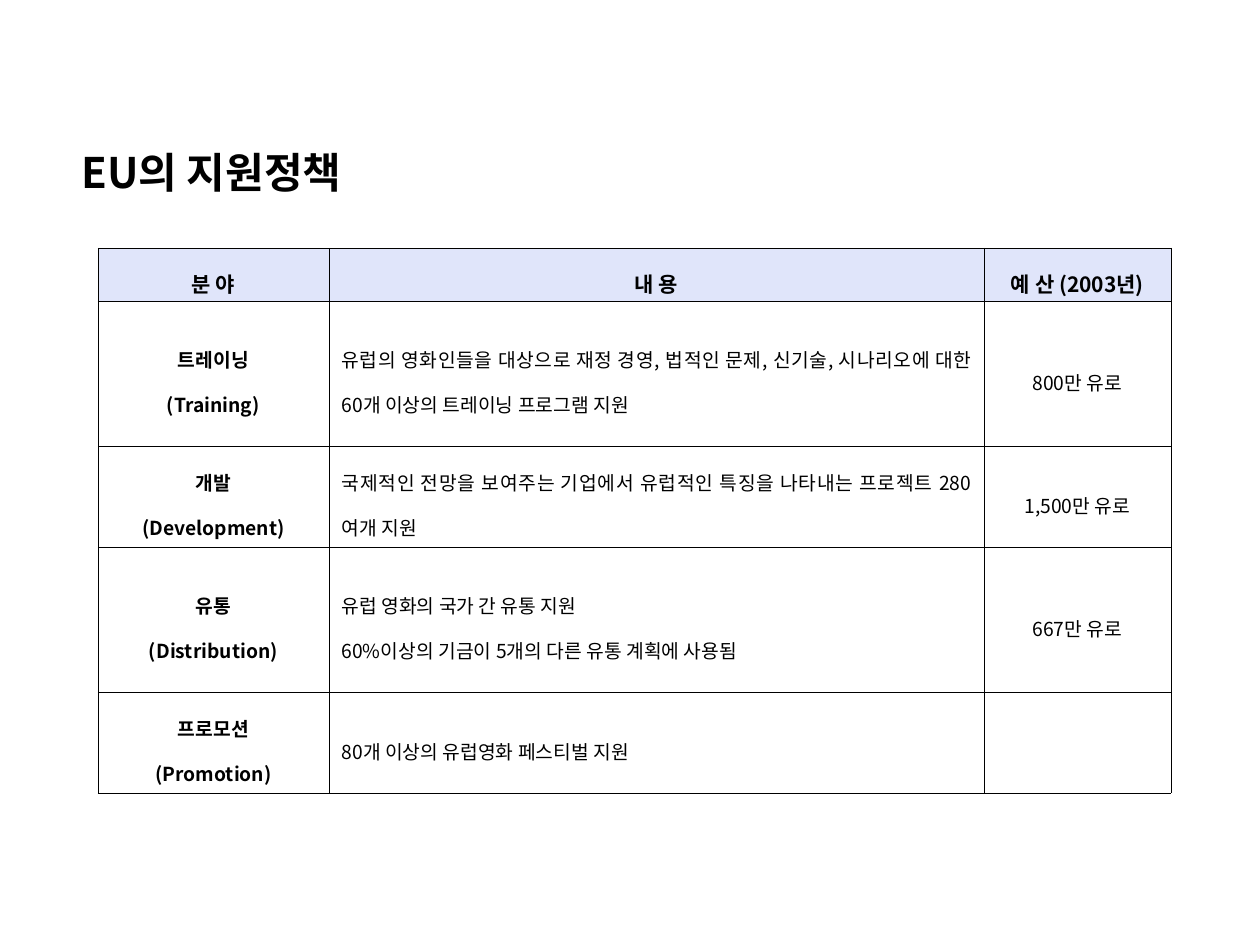
from lxml.etree import SubElement
from pptx import Presentation
from pptx.dml.color import RGBColor
from pptx.enum.text import MSO_ANCHOR, MSO_AUTO_SIZE, PP_ALIGN as ALIGN
from pptx.oxml.ns import qn
from pptx.util import Pt

PX = 914400 // 126
FONT = "Noto Sans CJK KR"
COLORS = {"text": "000000", "border": "000000", "header": "E0E5FA"}

TITLE = "EU의 지원정책"
COLS = [231, 655, 187]
ROWS = [53, 145, 101, 145, 101]
POLICIES = [
    ("분 야", "내 용", "예 산 (2003년)"),
    ("트레이닝\n(Training)",
     "유럽의 영화인들을 대상으로 재정 경영, 법적인 문제, 신기술, "
     "시나리오에 대한 60개 이상의 트레이닝 프로그램 지원",
     "800만 유로"),
    ("개발\n(Development)",
     "국제적인 전망을 보여주는 기업에서 유럽적인 특징을 나타내는 "
     "프로젝트 280여개 지원",
     "1,500만 유로"),
    ("유통\n(Distribution)",
     "유럽 영화의 국가 간 유통 지원\n"
     "60%이상의 기금이 5개의 다른 유통 계획에 사용됨",
     "667만 유로"),
    ("프로모션\n(Promotion)", "80개 이상의 유럽영화 페스티벌 지원", ""),
]


def px(n):
    return n * PX


def format_text(tf, size, bold, align=ALIGN.LEFT, spacing=None):
    for p in tf.paragraphs:
        p.alignment = align
        p.line_spacing = spacing
        for r in p.runs:
            r.font.size = Pt(size)
            r.font.bold = bold
            r.font.name = FONT
            r.font.color.rgb = RGBColor.from_string(COLORS["text"])
            SubElement(r.font._element, qn("a:ea"), typeface=FONT)


def set_borders(cell):
    tcPr = cell._tc.get_or_add_tcPr()
    for i, side in enumerate(("lnL", "lnR", "lnT", "lnB")):
        ln = tcPr.makeelement(qn(f"a:{side}"), {"w": str(Pt(0.28))})
        fill = SubElement(ln, qn("a:solidFill"))
        SubElement(fill, qn("a:srgbClr"), val=COLORS["border"])
        tcPr.insert(i, ln)  # borders precede the fill


def add_title(slide, x, y, w, h):
    tf = slide.shapes.add_textbox(px(x), px(y), px(w), px(h)).text_frame
    tf.word_wrap = False
    tf.auto_size = MSO_AUTO_SIZE.SHAPE_TO_FIT_TEXT
    tf.margin_top = tf.margin_bottom = 0
    tf.text = TITLE
    format_text(tf, 24, True)


def add_policy_table(slide, x, y):
    table = slide.shapes.add_table(
        len(ROWS), len(COLS), px(x), px(y), px(sum(COLS)), px(sum(ROWS))
    ).table
    table.first_row = table.horz_banding = False
    for col, w in zip(table.columns, COLS):
        col.width = px(w)
    for row, h in zip(table.rows, ROWS):
        row.height = px(h)

    for i, texts in enumerate(POLICIES):
        for j, text in enumerate(texts):
            cell = table.cell(i, j)
            header = i == 0
            cell.text_frame.text = text
            cell.vertical_anchor = MSO_ANCHOR.MIDDLE
            cell.margin_top = cell.margin_bottom = px(2)
            if header:
                cell.fill.solid()
                cell.fill.fore_color.rgb = RGBColor.from_string(COLORS["header"])
            else:
                cell.fill.background()
            set_borders(cell)
            align = ALIGN.JUSTIFY if j == 1 and not header else ALIGN.CENTER
            format_text(cell.text_frame, 12 if header else 11,
                        header or j == 0, align, 1.6)


def main():
    prs = Presentation()
    prs.slide_width, prs.slide_height = px(1260), px(945)
    slide = prs.slides.add_slide(prs.slide_layouts[6])
    # Policy table
    add_policy_table(slide, 98, 248)
    # Heading
    add_title(slide, 69, 147, 306, 63)
    prs.save("out.pptx")


if __name__ == "__main__":
    main()
